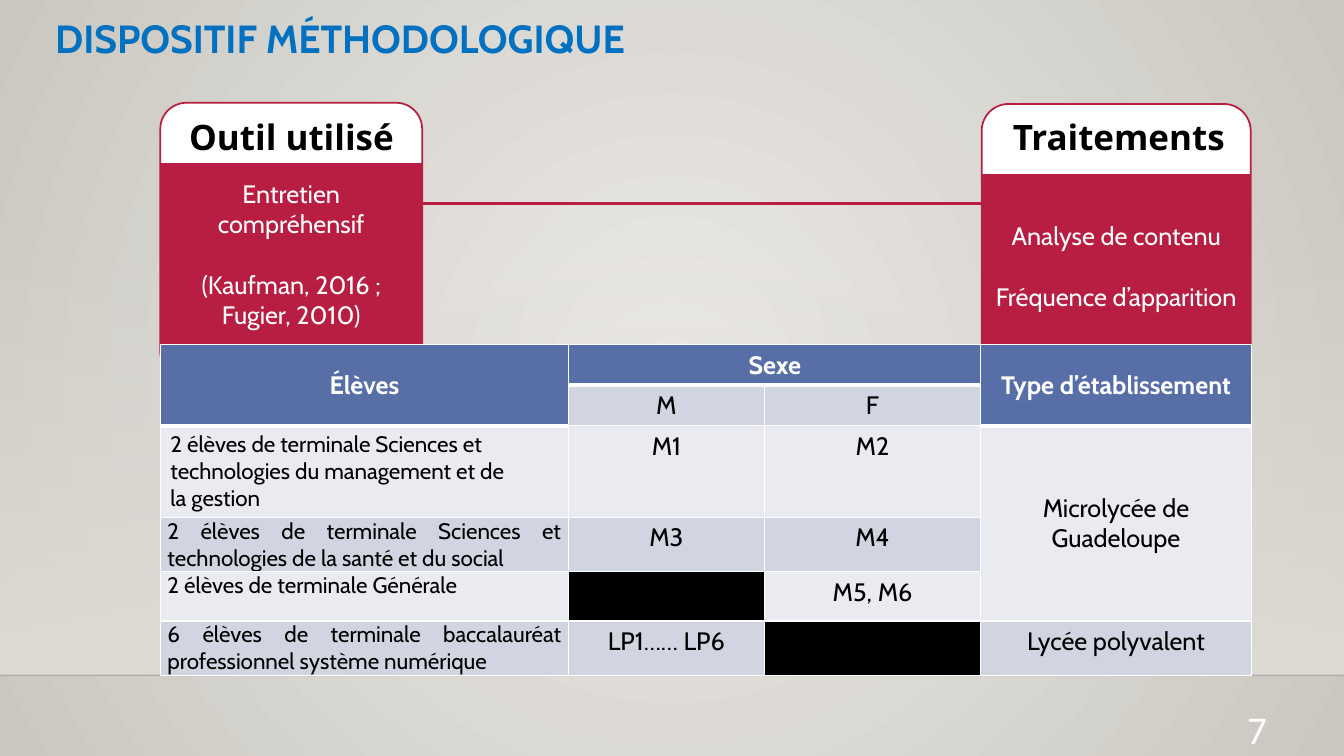
from lxml import etree
from pptx import Presentation
from pptx.dml.color import RGBColor
from pptx.enum.shapes import MSO_CONNECTOR, MSO_SHAPE
from pptx.enum.text import MSO_ANCHOR, PP_ALIGN
from pptx.oxml.ns import qn
from pptx.util import Cm, Pt

TITLE = "DISPOSITIF MÉTHODOLOGIQUE"
PAGE = "7"
# Cards: heading, (text, space before in points), left, top, width,
# band top, band height, heading left, band has an outline
CARDS = [
    ("Outil utilisé",
     [("Entretien compréhensif", 0), ("(Kaufman, 2016 ;", 22), ("Fugier, 2010)", 0)],
     4.04, 2.59, 6.6, 4.11, 4.57, 4.17, False),
    ("Traitements",
     [("Analyse de contenu", 0), ("Fréquence d’apparition", 22)],
     24.74, 2.62, 6.78, 4.39, 4.62, 25.02, True),
]
# None is covered by a merged cell; an empty text is a blacked-out cell
ROWS = [
    ["Élèves", "Sexe", None, "Type d’établissement"],
    [None, "M", "F", None],
    ["2 élèves de terminale Sciences et\ntechnologies du management et de\nla gestion",
     "M1", "M2", "Microlycée de Guadeloupe"],
    ["2 élèves de terminale Sciences et technologies de la santé et du social",
     "M3", "M4", None],
    ["2 élèves de terminale Générale", "", "M5, M6", None],
    ["6 élèves de terminale baccalauréat professionnel système numérique",
     "LP1…… LP6", "", "Lycée polyvalent"],
]
MERGES = [((0, 0), (1, 0)), ((0, 1), (0, 2)), ((0, 3), (1, 3)), ((2, 3), (4, 3))]
WIDTHS = [10.29, 4.93, 5.46, 6.81]
HEIGHTS = [1.02, 1.02, 2.31, 1.37, 1.24, 1.37]

WHITE = RGBColor(0xFF, 0xFF, 0xFF)
BLACK = RGBColor(0, 0, 0)
RED = RGBColor(0xB7, 0x1E, 0x42)
BLUE = RGBColor(0x00, 0x70, 0xC0)
HEAD = RGBColor(0x58, 0x6E, 0xA6)
DARK = RGBColor(0xD1, 0xD5, 0xE1)
LIGHT = RGBColor(0xEA, 0xEB, 0xF1)
GLOW = RGBColor(0xEC, 0xEA, 0xE7)
EDGE = RGBColor(0xCA, 0xC7, 0xC1)
WALL = RGBColor(0xDF, 0xDB, 0xD5)
LEFT, MID, RIGHT, JUST = PP_ALIGN.LEFT, PP_ALIGN.CENTER, PP_ALIGN.RIGHT, PP_ALIGN.JUSTIFY
TOP, CENTER = MSO_ANCHOR.TOP, MSO_ANCHOR.MIDDLE
RECT, ROUND = MSO_SHAPE.RECTANGLE, MSO_SHAPE.ROUNDED_RECTANGLE

prs = Presentation()
prs.slide_width, prs.slide_height = Cm(33.87), Cm(19.05)
slide = prs.slides.add_slide(prs.slide_layouts[6])
shapes = slide.shapes


def style(par, size, color, bold=False, align=MID, face="Cabin"):
    par.alignment = align
    font = par.font
    font.size, font.name, font.bold = Pt(size), face, bold
    font.color.rgb = color


def blend(fill, first, last):
    """Set a two-colour gradient and return its stops."""
    fill.gradient()
    stops = fill.gradient_stops
    for stop, color, pos in zip(stops, (first, last), (0, 1)):
        stop.color.rgb, stop.position = color, pos
    return stops


def fade(node, share):
    """Set the opacity of the colour inside node, in percent."""
    color = next(node.iter(qn("a:srgbClr")))
    etree.SubElement(color, qn("a:alpha"), val=str(share * 1000))


def block(kind, x, y, w, h, line=None, width=1.25):
    shape = shapes.add_shape(kind, Cm(x), Cm(y), Cm(w), Cm(h))
    shape.shadow.inherit = False
    if line is None:
        shape.line.fill.background()
    else:
        shape.line.color.rgb, shape.line.width = line, Pt(width)
    return shape


def rule(x1, x2, y, color, width):
    line = shapes.add_connector(MSO_CONNECTOR.STRAIGHT, Cm(x1), Cm(y), Cm(x2), Cm(y))
    line.line.color.rgb, line.line.width = color, Pt(width)
    etree.SubElement(line._element.spPr, qn("a:effectLst"))
    return line


def label(text, x, y, w, h, *look):
    frame = shapes.add_textbox(Cm(x), Cm(y), Cm(w), Cm(h)).text_frame
    frame.word_wrap = True
    frame.text = text
    style(frame.paragraphs[0], *look)
    return frame.paragraphs[0]


def border(cell, base):
    """Draw white borders, the bottom one base points wide."""
    props = cell._tc.get_or_add_tcPr()
    for i, (side, width) in enumerate(zip("LRTB", (1, 1, 1, base))):
        line = etree.Element(qn("a:ln" + side), w=str(Pt(width)))
        solid = etree.SubElement(line, qn("a:solidFill"))
        etree.SubElement(solid, qn("a:srgbClr"), val=str(WHITE))
        props.insert(i, line)


def backdrop():
    blend(slide.background.fill, GLOW, EDGE)
    grad = next(slide.element.iter(qn("a:gradFill")))
    grad.remove(grad.find(qn("a:lin")))
    path = etree.SubElement(grad, qn("a:path"), path="circle")
    etree.SubElement(path, qn("a:fillToRect"), l="50000", t="50000", r="50000", b="50000")
    wall = block(RECT, 0, 5.61, 33.87, 11.41)
    blend(wall.fill, WALL, WALL)
    wall.fill.gradient_angle = 270
    fade(wall._element.spPr, 0)
    floor = rule(0, 33.87, 17.02, BLACK, 1)
    fade(floor._element.spPr, 20)


def card(head, lines, x, y, w, top, high, left, edged):
    back = block(ROUND, x, y, w, 6.93, RED)
    back.adjustments[0] = 0.1
    back.fill.solid()
    back.fill.fore_color.rgb = WHITE
    band = block(RECT, x, top, w, high, RED if edged else None, 0.75)
    band.fill.solid()
    band.fill.fore_color.rgb = RED
    frame = band.text_frame
    frame.word_wrap, frame.vertical_anchor = True, CENTER
    frame.text = "\n".join(text for text, gap in lines)
    for par, (text, gap) in zip(frame.paragraphs, lines):
        style(par, 18, WHITE)
        if gap:
            par.space_before = Pt(gap)
    label(head, left, 2.79, 6.35, 1.32, 25, BLACK, True, MID, "Noto Sans")


def grid():
    table = shapes.add_table(len(ROWS), len(WIDTHS), Cm(4.04), Cm(8.69),
                             Cm(sum(WIDTHS)), Cm(sum(HEIGHTS))).table
    table.first_row = table.horz_banding = False
    for col, width in zip(table.columns, WIDTHS):
        col.width = Cm(width)
    for row, height in zip(table.rows, HEIGHTS):
        row.height = Cm(height)
    for start, end in MERGES:
        table.cell(*start).merge(table.cell(*end))
    for r, row in enumerate(ROWS):
        for c, text in enumerate(row):
            cell = table.cell(r, c)
            head = r == 0 or (r == 1 and text is None)
            shade = HEAD if head else BLACK if text == "" else DARK if r % 2 else LIGHT
            cell.fill.solid()
            cell.fill.fore_color.rgb = shade
            border(cell, 3 if head else 1)
            if not text:
                continue
            cell.text = text
            cell.vertical_anchor = CENTER if cell.is_merge_origin else TOP
            name = c == 0 and not head
            if name and r > 2:
                cell.margin_left = cell.margin_right = Cm(0.18)
                cell.margin_top = cell.margin_bottom = 0
            for par in cell.text_frame.paragraphs:
                style(par, 16 if name else 18, WHITE if head else BLACK, head,
                      JUST if name else MID)


backdrop()
rule(4.04, 30.73, 5.13, RED, 2.5)
label(TITLE, 1.14, 0.38, 26.67, 1.8, 28, BLUE, True, LEFT).line_spacing = 0.9
for item in CARDS:
    card(*item)
grid()
label(PAGE, 24.28, 17.65, 7.9, 1.02, 28, WHITE, False, RIGHT, "Calibri")
prs.save("out.pptx")
